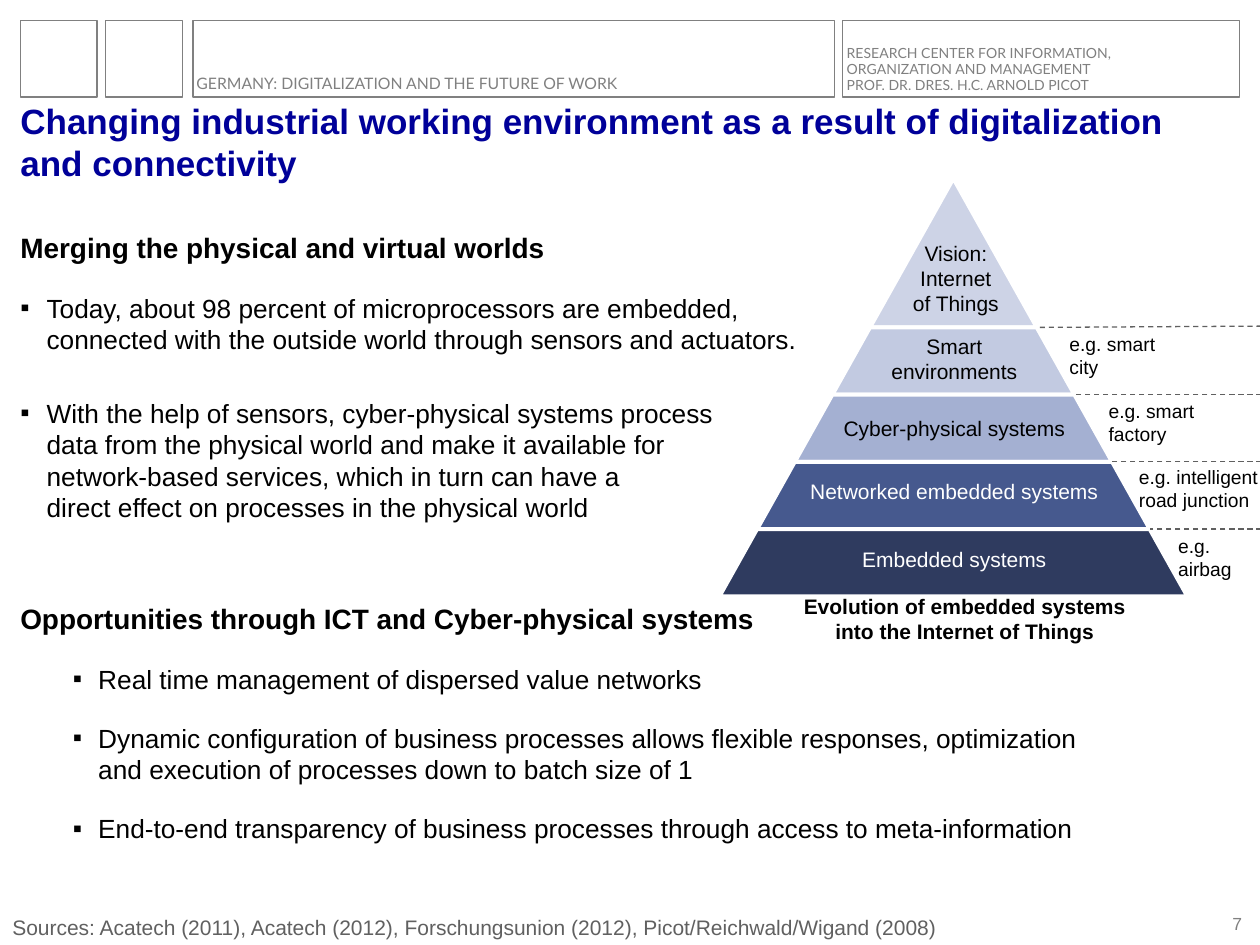
import pptx
import pptx.dml.color
import pptx.enum.dml
import pptx.enum.shapes
import pptx.enum.text
import pptx.oxml.ns
import pptx.util
from lxml import etree

Cm, Pt = pptx.util.Cm, pptx.util.Pt
RGB = pptx.dml.color.RGBColor.from_string
ALIGN = pptx.enum.text.PP_ALIGN
ANCHOR = pptx.enum.text.MSO_ANCHOR
qn = pptx.oxml.ns.qn

C = {
    "black": "000000", "white": "FFFFFF", "title": "000099",
    "header": "808080", "muted": "606060",
    "vision": "C2CAE1", "smart": "C2CAE1", "cyber": "A4B0D2",
    "networked": "46598E", "embedded": "2F3B5F",
}


def write(p, text, size, color="black", bold=False, font="Arial"):
    """Add text to a paragraph, one run per line, with line breaks between."""
    for i, line in enumerate(text.split("\n")):
        if i:
            p.add_line_break()
        r = p.add_run()
        r.text = line
        r.font.name, r.font.size, r.font.bold = font, Pt(size), bold
        r.font.color.rgb = RGB(C[color])


def text_box(x, y, w, h, inset=True):
    tf = s.shapes.add_textbox(Cm(x), Cm(y), Cm(w), Cm(h)).text_frame
    tf.word_wrap = True
    if not inset:
        tf.margin_left = tf.margin_right = tf.margin_top = tf.margin_bottom = 0
        tf.vertical_anchor = ANCHOR.BOTTOM
    return tf


prs = pptx.Presentation()
prs.slide_width, prs.slide_height = Cm(25.4), Cm(19.05)
s = prs.slides.add_slide(prs.slide_layouts[1])

# Header band
for x, w in [(0.41, 1.55), (2.13, 1.55), (3.89, 12.93), (16.99, 8)]:
    sp = s.shapes.add_shape(pptx.enum.shapes.MSO_SHAPE.RECTANGLE, Cm(x), Cm(0.41), Cm(w), Cm(1.55))
    sp.shadow.inherit = False
    sp.fill.background()
    sp.line.color.rgb = RGB(C["header"])
    sp.line.width = Pt(0.75)

headers = [
    (17.07, 6.6, 8, ["RESEARCH CENTER FOR INFORMATION,\nORGANIZATION AND MANAGEMENT",
                     "PROF. DR. DRES. H.C. ARNOLD PICOT"]),
    (3.96, 11.71, 9, ["GERMANY: DIGITALIZATION AND THE FUTURE OF WORK"]),
]
for x, w, size, paragraphs in headers:
    tf = text_box(x, 0.71, w, 1.17, inset=False)
    for i, text in enumerate(paragraphs):
        p = tf.add_paragraph() if i else tf.paragraphs[0]
        p.line_spacing = 0.95
        write(p, text, size, "header", font="Lato")

# Title and body placeholders
title, body = s.shapes.title, s.placeholders[1]
for sp, top, height in [(title, 2.24, 1.47), (body, 4.65, 13.56)]:
    sp.left, sp.top, sp.width, sp.height = Cm(0.41), Cm(top), Cm(24.59), Cm(height)
    tf = sp.text_frame
    tf.word_wrap = True
    tf.auto_size = pptx.enum.text.MSO_AUTO_SIZE.NONE
    tf.margin_left = tf.margin_right = tf.margin_top = tf.margin_bottom = 0

title.text_frame.vertical_anchor = ANCHOR.BOTTOM
p = title.text_frame.paragraphs[0]
p.alignment = ALIGN.LEFT
write(p, "Changing industrial working environment as a result of digitalization\nand connectivity",
      20, "title", bold=True)

# Kind of paragraph: level, left margin, hanging indent, size
kinds = {"heading": (0, 0, 0, 16), "bullet": (0, 0.53, -0.53, 15), "sub": (1, 1.57, -0.51, 15)}
content = [
    ("heading", 15.8, "Merging the physical and virtual worlds"),
    ("bullet", 24, "Today, about 98 percent of microprocessors are embedded,\n"
                   "connected with the outside world through sensors and actuators."),
    ("bullet", 45, "With the help of sensors, cyber-physical systems process\n"
                   "data from the physical world and make it available for\n"
                   "network-based services, which in turn can have a\n"
                   "direct effect on processes in the physical world"),
    ("heading", 15.8, "Opportunities through ICT and Cyber-physical systems"),
    ("sub", 15.8, "Real time management of dispersed value networks"),
    ("sub", 15.8, "Dynamic configuration of business processes allows flexible responses, optimization\n"
                  "and execution of processes down to batch size of 1"),
    ("sub", 15.8, "End-to-end transparency of business processes through access to meta-information"),
]
tf = body.text_frame
for i, (kind, after, text) in enumerate(content):
    level, margin, indent, size = kinds[kind]
    p = tf.add_paragraph() if i else tf.paragraphs[0]
    p.level = level
    pPr = p._p.get_or_add_pPr()
    pPr.set("marL", str(Cm(margin)))
    pPr.set("indent", str(Cm(indent)))
    if kind == "heading":
        etree.SubElement(pPr, qn("a:buNone"))
    else:
        buClr = etree.SubElement(pPr, qn("a:buClr"))
        etree.SubElement(buClr, qn("a:srgbClr"), val=C["black"])
        etree.SubElement(pPr, qn("a:buChar"), char="▪")
    p.space_before, p.space_after = Pt(0), Pt(after)
    write(p, text, size, bold=kind == "heading")

# Footer
tf = text_box(24.64, 18.39, 0.4, 0.43, inset=False)
tf.word_wrap = False
tf.paragraphs[0].alignment = ALIGN.RIGHT
write(tf.paragraphs[0], "7", 10, "header")
tf = text_box(0, 18.31, 21.11, 1.3)
write(tf.paragraphs[0],
      "Sources: Acatech (2011), Acatech (2012), Forschungsunion (2012), Picot/Reichwald/Wigand (2008)",
      12, "muted")

# Pyramid: every level is a slice of one triangle
apex_x, apex_y, slope = 19.22, 3.6, 0.56
edges = [apex_y] + [6.6 + 1.355 * i for i in range(5)]
levels = ["vision", "smart", "cyber", "networked", "embedded"]
for name, top, bottom in zip(levels, edges, edges[1:]):
    half_top, half_bottom = slope * (top - apex_y), slope * (bottom - apex_y)
    corners = [(apex_x + half_top, top), (apex_x + half_bottom, bottom), (apex_x - half_bottom, bottom)]
    if half_top:
        corners.append((apex_x - half_top, top))
    points = [(Cm(x), Cm(y)) for x, y in corners]
    outline = s.shapes.build_freeform(*points[0])
    outline.add_line_segments(points[1:], close=True)
    sp = outline.convert_to_shape()
    sp.shadow.inherit = False
    sp.fill.solid()
    sp.fill.fore_color.rgb = RGB(C[name])
    sp.line.color.rgb = RGB(C["white"])
    sp.line.width = Pt(2.25)
    if name == "vision":
        color = sp._element.spPr.find(qn("a:solidFill")).find(qn("a:srgbClr"))
        etree.SubElement(color, qn("a:alpha"), val="81000")

level_labels = [
    (17.68, 4.72, 3.18, 1.8, "Vision:\nInternet\nof Things", "black"),
    (15.39, 6.6, 7.7, 1.27, "Smart\nenvironments", "black"),
    (15.39, 8.26, 7.7, 0.76, "Cyber-physical systems", "black"),
    (15.39, 9.53, 7.7, 0.76, "Networked embedded systems", "white"),
    (15.39, 10.9, 7.7, 0.76, "Embedded systems", "white"),
]
for x, y, w, h, text, color in level_labels:
    p = text_box(x, y, w, h).paragraphs[0]
    p.alignment = ALIGN.CENTER
    write(p, text, 12, color)

# Dashed separators with an example below each
examples = [
    (21.31, 6.58, 4.22, "e.g. smart\ncity"),
    (22.1, 7.92, 4.22, "e.g. smart\nfactory"),
    (22.71, 9.25, 4.22, "e.g. intelligent\nroad junction"),
    (23.5, 10.64, 3.23, "e.g.\nairbag"),
]
for edge, (x, y, w, text) in zip(edges[1:], examples):
    end_y = 6.57 if edge == edges[1] else edge
    line = s.shapes.add_connector(pptx.enum.shapes.MSO_CONNECTOR.STRAIGHT, Cm(26.16), Cm(end_y),
                                  Cm(apex_x + slope * (edge - apex_y)), Cm(edge))
    line.line.color.rgb = RGB(C["muted"])
    line.line.width = Pt(0.75)
    line.line.dash_style = pptx.enum.dml.MSO_LINE.DASH
    etree.SubElement(line._element.spPr, qn("a:effectLst"))
    write(text_box(x, y, w, 1.19).paragraphs[0], text, 11)

p = text_box(15.6, 11.84, 7.7, 1.27).paragraphs[0]
p.alignment = ALIGN.CENTER
write(p, "Evolution of embedded systems into the Internet of Things", 12, bold=True)

prs.save("out.pptx")
